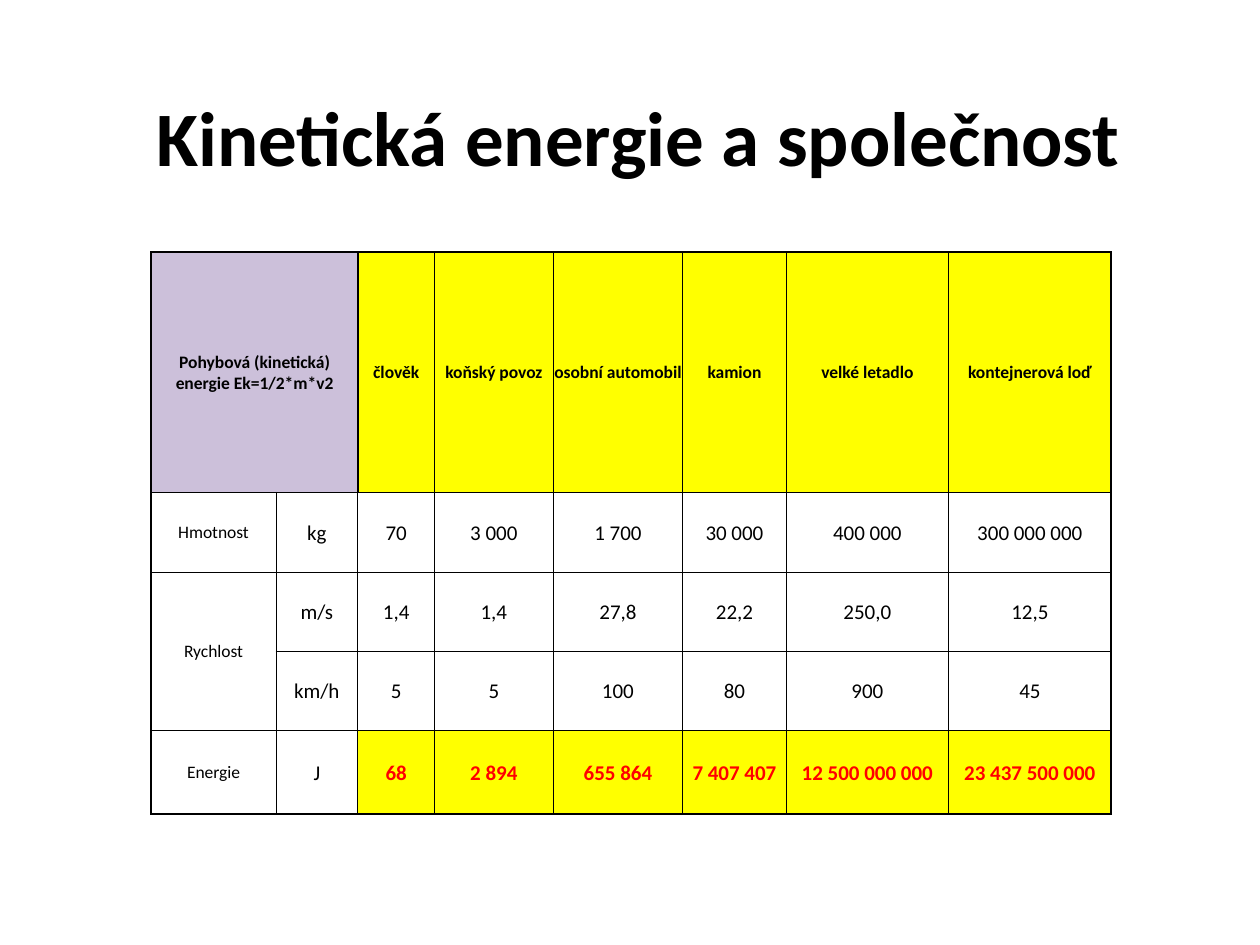
from pptx import Presentation
from pptx.dml.color import RGBColor
from pptx.enum import text
from pptx.oxml import ns, xmlchemy
from pptx.util import Pt

BLACK = RGBColor(0x00, 0x00, 0x00)
RED = RGBColor(0xFF, 0x00, 0x00)
YELLOW = RGBColor(0xFF, 0xFF, 0x00)
LILAC = RGBColor(0xCC, 0xC0, 0xDA)
FONT = "Calibri"

COLUMN_WIDTHS = [71.28, 46.8, 43.92, 67.68, 74.16, 59.04, 92.88, 92.88]
ROW_HEIGHTS = [137.52, 45.36, 45.36, 45.36, 47.52]
ROWS = [
    ["Pohybová (kinetická) energie Ek=1/2*m*v2", "", "člověk", "koňský povoz",
     "osobní automobil", "kamion", "velké letadlo", "kontejnerová loď"],
    ["Hmotnost", "kg", "70", "3 000", "1 700", "30 000", "400 000", "300 000 000"],
    ["Rychlost", "m/s", "1,4", "1,4", "27,8", "22,2", "250,0", "12,5"],
    ["", "km/h", "5", "5", "100", "80", "900", "45"],
    ["Energie", "J", "68", "2 894", "655 864", "7 407 407",
     "12 500 000 000", "23 437 500 000"],
]


def write_text(frame, words, size, bold=False, color=BLACK, spacing=1.0):
    frame.word_wrap = True
    para = frame.paragraphs[0]
    para.alignment = text.PP_ALIGN.CENTER
    para.line_spacing = spacing
    span = para.add_run()
    span.text = words
    span.font.name = FONT
    span.font.size = Pt(size)
    span.font.bold = bold
    span.font.color.rgb = color


def set_borders(cell, widths):
    properties = cell._tc.get_or_add_tcPr()
    for side, width in widths.items():
        line = xmlchemy.OxmlElement(f"a:ln{side}")
        line.set("w", str(Pt(width)))
        fill = xmlchemy.OxmlElement("a:solidFill")
        color = xmlchemy.OxmlElement("a:srgbClr")
        color.set("val", str(BLACK))
        fill.append(color)
        line.append(fill)
        properties.append(line)


def style_cell(cell, row, column):
    last_row, last_column = len(ROW_HEIGHTS) - 1, len(COLUMN_WIDTHS) - 1
    heading = row == 0 and column < 2
    heavy = {
        "L": column == 0 or (row == 0 and column == 2),
        "R": column == last_column or heading,
        "T": row == 0 or (row == 1 and column < 2),
        "B": row == last_row or heading,
    }
    set_borders(cell, {side: 1 if thick else 0.5 for side, thick in heavy.items()})
    cell.vertical_anchor = text.MSO_ANCHOR.MIDDLE
    cell.margin_left = cell.margin_right = cell.margin_top = Pt(0.72)
    cell.margin_bottom = Pt(0)
    if heading or (row in (0, last_row) and column > 1):
        cell.fill.solid()
        cell.fill.fore_color.rgb = LILAC if heading else YELLOW
    else:
        cell.fill.background()


def add_title(page, left, top, width, height):
    box = page.shapes.add_textbox(Pt(left), Pt(top), Pt(width), Pt(height))
    box.text_frame.vertical_anchor = text.MSO_ANCHOR.MIDDLE
    write_text(box.text_frame, " Kinetická energie a společnost", 44,
               bold=True, spacing=0.9)


def add_energy_table(page, left, top):
    frame = page.shapes.add_table(
        len(ROWS), len(COLUMN_WIDTHS), Pt(left), Pt(top),
        Pt(sum(COLUMN_WIDTHS)), Pt(sum(ROW_HEIGHTS)))
    table = frame.table
    table.first_row = False
    table.horz_banding = False
    for column, width in zip(table.columns, COLUMN_WIDTHS):
        column.width = Pt(width)
    for row, height in zip(table.rows, ROW_HEIGHTS):
        row.height = Pt(height)
    table.cell(0, 0).merge(table.cell(0, 1))
    table.cell(2, 0).merge(table.cell(3, 0))
    for row, values in enumerate(ROWS):
        for column, value in enumerate(values):
            cell = table.cell(row, column)
            style_cell(cell, row, column)
            if value:
                result = row == len(ROWS) - 1 and column > 1
                write_text(cell.text_frame, value,
                           10 if row == 0 or column == 0 else 12,
                           bold=row == 0 or result,
                           color=RED if result else BLACK)


def main():
    deck = Presentation()
    deck.slide_width, deck.slide_height = Pt(720), Pt(540)
    page = deck.slides.add_slide(deck.slide_layouts[6])
    add_title(page, 49.68, 28.8, 620.64, 104.4)
    add_energy_table(page, 86.4, 144)
    deck.save("out.pptx")


if __name__ == "__main__":
    main()
